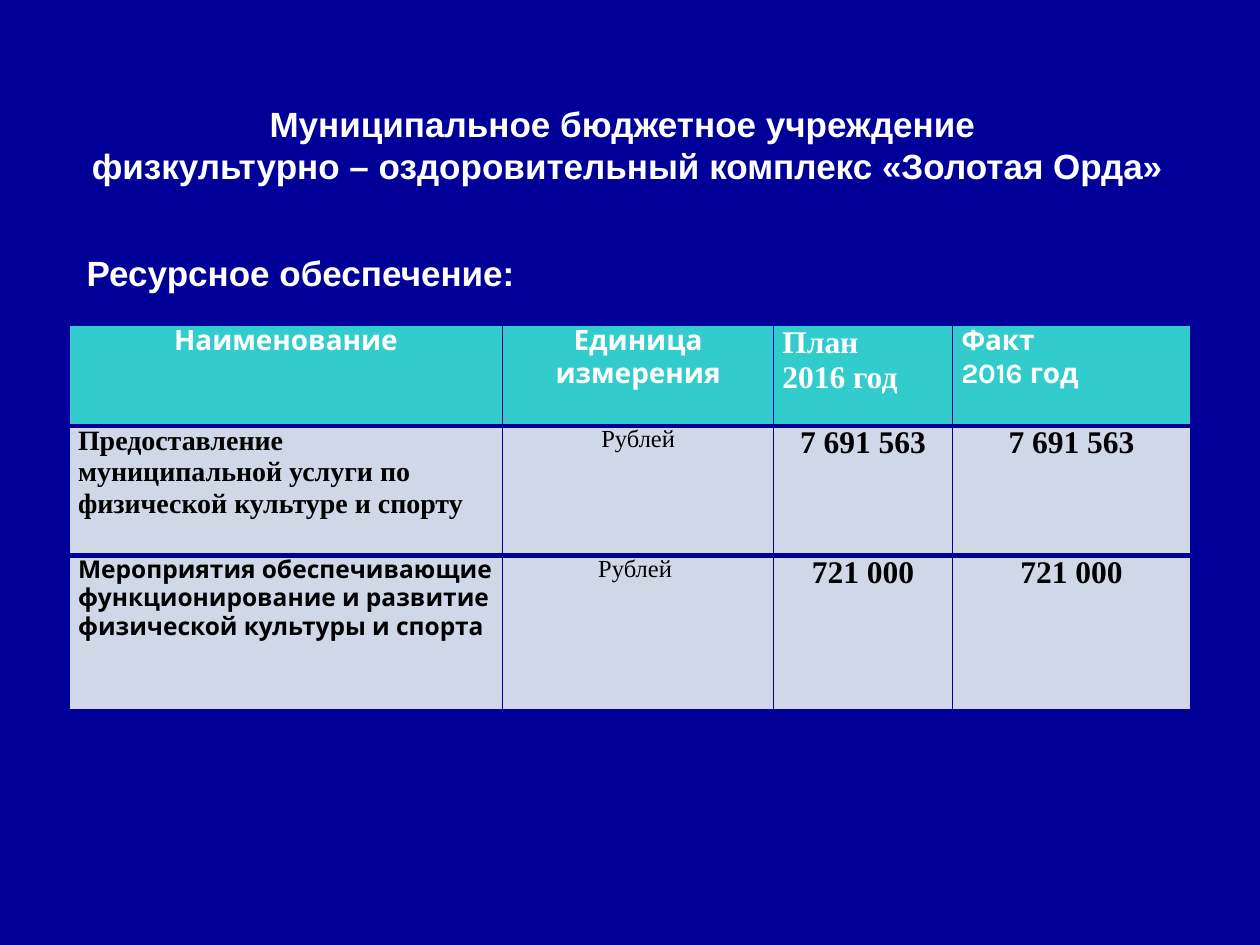
import pptx
import pptx.dml.color
import pptx.enum.text
import pptx.oxml
import pptx.oxml.ns
import pptx.util
from pptx.util import Inches

COLORS = {"navy": "000099", "white": "FFFFFF", "black": "000000",
          "teal": "33CCCC", "pale": "D0D8E8"}
ALIGN = pptx.enum.text.PP_ALIGN
SERIF = "Times New Roman"
HEADER = [
    ("Наименование", {"size": 16, "font": "Karla", "align": ALIGN.CENTER}),
    ("Единица измерения", {"size": 16, "font": "Karla", "align": ALIGN.CENTER}),
    ("План\n2016 год", {"size": 18, "font": SERIF}),
    ("Факт\n2016 год", {"size": 16, "font": "Karla"}),
]
UNIT = {"size": 14, "font": SERIF, "bold": False, "align": ALIGN.CENTER}
AMOUNT = {"size": 18, "font": SERIF, "align": ALIGN.CENTER}
BODY = [
    [("Предоставление муниципальной услуги по физической культуре и спорту",
      {"size": 16, "font": SERIF}),
     ("Рублей", UNIT), ("7 691 563", AMOUNT), ("7 691 563", AMOUNT)],
    [("Мероприятия обеспечивающие функционирование и развитие физической культуры и спорта",
      {"size": 14, "font": "Karla"}),
     ("Рублей ", UNIT), ("721 000", AMOUNT), ("721 000", AMOUNT)],
]


def rgb(name):
    """Return the named colour."""
    return pptx.dml.color.RGBColor.from_string(COLORS[name])


def write(frame, text, size=20, font="Arial", color="white", bold=True, align=ALIGN.LEFT):
    """Fill a text frame with one paragraph for each line of text."""
    for index, line in enumerate(text.split("\n")):
        para = frame.add_paragraph() if index else frame.paragraphs[0]
        para.alignment = align
        span = para.add_run()
        span.text = line
        span.font.size = pptx.util.Pt(size)
        span.font.name = font
        span.font.bold = bold
        span.font.color.rgb = rgb(color)


def add_title(page, left, top, width, height):
    """Place the two-line name of the institution."""
    box = page.shapes.title
    box.left, box.top, box.width, box.height = left, top, width, height
    frame = box.text_frame
    frame.word_wrap = False
    frame.auto_size = pptx.enum.text.MSO_AUTO_SIZE.NONE
    frame.vertical_anchor = pptx.enum.text.MSO_ANCHOR.TOP
    write(frame, "Муниципальное бюджетное учреждение \n"
                 "физкультурно – оздоровительный комплекс «Золотая Орда»", align=ALIGN.CENTER)


def add_subtitle(page, left, top, width, height):
    """Place the heading above the table."""
    frame = page.shapes.add_textbox(left, top, width, height).text_frame
    frame.word_wrap = True
    write(frame, "Ресурсное обеспечение:")


def set_borders(cell, **widths):
    """Draw the cell borders, with widths in points for each side."""
    properties = cell._tc.get_or_add_tcPr()
    for index, (side, width) in enumerate(widths.items()):
        properties.insert(index, pptx.oxml.parse_xml(
            f'<a:{side} {pptx.oxml.ns.nsdecls("a")} w="{pptx.util.Pt(width)}">'
            f'<a:solidFill><a:srgbClr val="{COLORS["navy"]}"/></a:solidFill></a:{side}>'))


def add_resources(page, left, top, width, height):
    """Place the table of planned and actual resources."""
    rows = [HEADER] + BODY
    table = page.shapes.add_table(len(rows), len(HEADER), left, top, width, height).table
    for column, share in zip(table.columns, (3.44, 2.15, 1.42, 1.89)):
        column.width = int(width * share / 8.9)
    for row, share in zip(table.rows, (0.8, 1.03, 1.22)):
        row.height = int(height * share / 3.05)
    for row_index, row in enumerate(rows):
        is_header = row_index == 0
        is_last = row_index == len(rows) - 1
        for column_index, (text, style) in enumerate(row):
            cell = table.cell(row_index, column_index)
            cell.margin_left = cell.margin_right = Inches(0.07)
            cell.margin_top = cell.margin_bottom = 0
            cell.fill.solid()
            cell.fill.fore_color.rgb = rgb("teal" if is_header else "pale")
            set_borders(cell, lnL=1, lnR=1, lnT=1 if is_header else 3, lnB=1 if is_last else 3)
            write(cell.text_frame, text, color="white" if is_header else "black", **style)


def main():
    """Build and save the deck."""
    deck = pptx.Presentation()
    deck.slide_width, deck.slide_height = Inches(10), Inches(7.5)
    page = deck.slides.add_slide(deck.slide_layouts.get_by_name("Title Only"))
    page.background.fill.solid()
    page.background.fill.fore_color.rgb = rgb("navy")
    add_title(page, Inches(0.6), Inches(0.76), Inches(8.76), Inches(0.77))
    add_subtitle(page, Inches(0.59), Inches(1.95), Inches(6.3), Inches(0.44))
    add_resources(page, Inches(0.55), Inches(2.58), Inches(8.9), Inches(3.05))
    deck.save("out.pptx")


if __name__ == "__main__":
    main()
